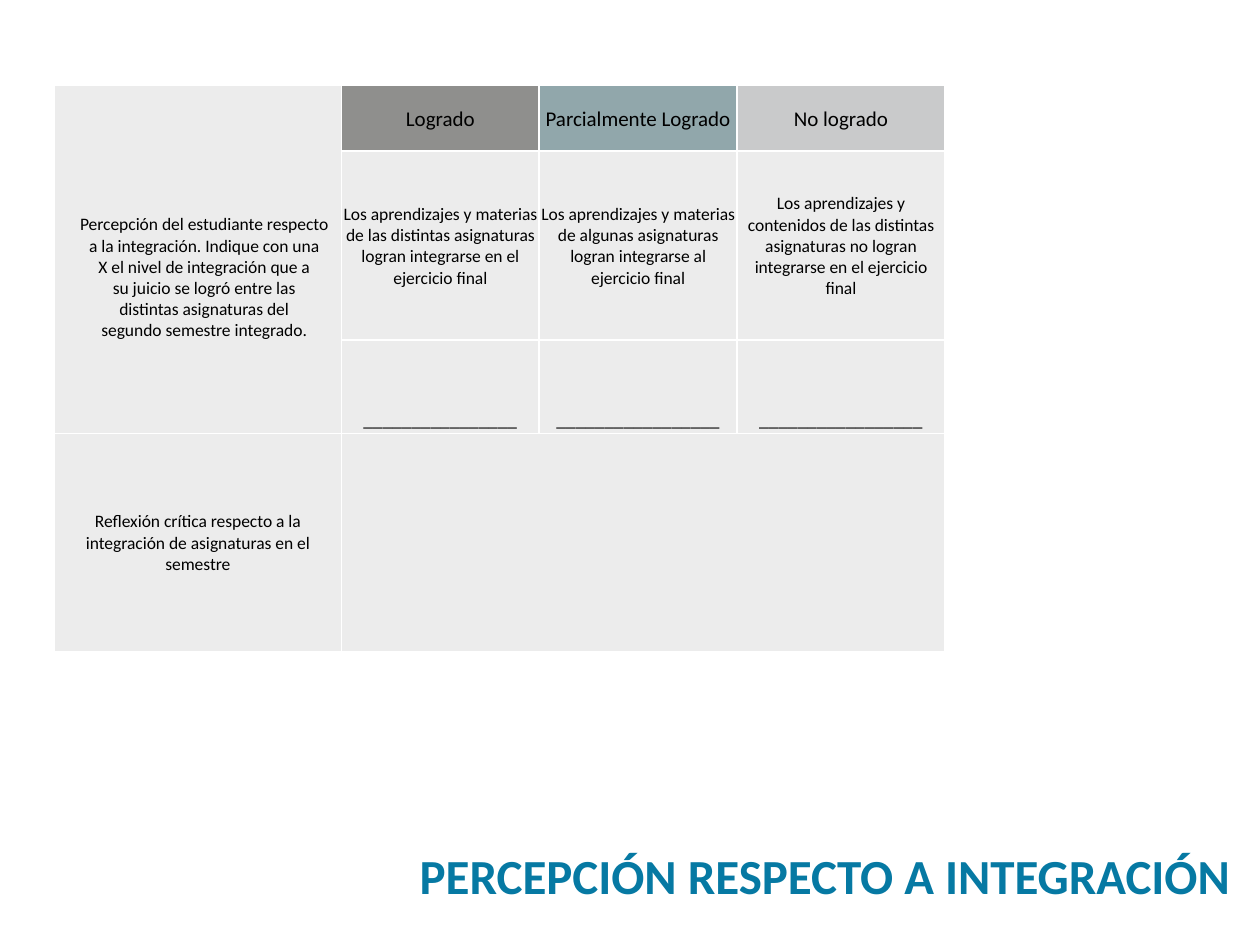
import pptx
import pptx.dml.color
import pptx.enum.text
import pptx.oxml
import pptx.oxml.ns
import pptx.util

SLIDE_WIDTH, SLIDE_HEIGHT = 10, 7.5
FONT = "Calibri"
PALE, INK, WHITE, BLUE = "ECECEC", "000000", "FFFFFF", "0679A3"
HEADER_FILLS = ["8F8F8D", "91A7AB", "C9CACB"]
LEFT, WIDTH = 0.43, 7.07
LABEL_WIDTH = 2.28
LEVEL_WIDTHS = [1.57, 1.57, 1.65]

PROMPT = [
    "Percepción del estudiante respecto",
    "a la integración. Indique con una",
    "X el nivel de integración que a",
    "su juicio se logró entre las",
    "distintas asignaturas del",
    "segundo semestre integrado.",
]
LEVELS = [
    ("Logrado",
     "Los aprendizajes y materias de las distintas asignaturas logran integrarse en el ejercicio final",
     "_" * 16),
    ("Parcialmente Logrado",
     "Los aprendizajes y materias de algunas asignaturas logran integrarse al ejercicio final",
     "_" * 17),
    ("No logrado",
     "Los aprendizajes y contenidos de las distintas asignaturas no logran integrarse en el ejercicio final",
     "_" * 17),
]
REFLECTION = "Reflexión crítica respecto a la integración de asignaturas en el semestre"


def inches(value):
    return pptx.util.Inches(value)


def colour(value):
    return pptx.dml.color.RGBColor.from_string(value)


def format_text(frame, size, align, hue=INK, bold=False):
    for para in frame.paragraphs:
        para.alignment = align
        para.font.size = pptx.util.Pt(size)
        for span in para.runs:
            span.font.name = FONT
            span.font.size = pptx.util.Pt(size)
            span.font.bold = bold
            span.font.color.rgb = colour(hue)


def set_borders(cell):
    """Draw a thin white line on every side of a cell."""
    properties = cell._tc.get_or_add_tcPr()
    for side in ("lnL", "lnR", "lnT", "lnB"):
        properties.append(pptx.oxml.parse_xml(
            f'<a:{side} {pptx.oxml.ns.nsdecls("a")} w="12700"><a:solidFill>'
            f'<a:srgbClr val="{WHITE}"/></a:solidFill></a:{side}>'))


def fill_cell(cell, text, size=10, top=0.01):
    cell.margin_left = cell.margin_right = inches(0.01)
    cell.margin_top, cell.margin_bottom = inches(top), 0
    cell.vertical_anchor = pptx.enum.text.MSO_ANCHOR.MIDDLE
    cell.text_frame.text = text
    format_text(cell.text_frame, size, pptx.enum.text.PP_ALIGN.CENTER)


def add_grid(page, box, columns, rows):
    """Place an empty table of pale cells in the box."""
    table = page.shapes.add_table(len(rows), len(columns), *map(inches, box)).table
    table.first_row = table.horz_banding = False
    for column, width in zip(table.columns, columns):
        column.width = inches(width)
    for row, height in zip(table.rows, rows):
        row.height = inches(height)
    for cell in table.iter_cells():
        set_borders(cell)
        cell.fill.solid()
        cell.fill.fore_color.rgb = colour(PALE)
    return table


def add_levels_table(page, box):
    rows = [0.52, 1.5, box[3] - 2.02]
    table = add_grid(page, box, [LABEL_WIDTH] + LEVEL_WIDTHS, rows)

    # Prompt beside all three rows
    prompt = table.cell(0, 0)
    prompt.merge(table.cell(2, 0))
    fill_cell(prompt, "\n".join(PROMPT))
    for para in prompt.text_frame.paragraphs:
        para._p.get_or_add_pPr().set("marL", str(inches(0.1)))

    # One column for each level: heading, description, answer line
    for column, (level, hue) in enumerate(zip(LEVELS, HEADER_FILLS), start=1):
        heading, description, answer = level
        table.cell(0, column).fill.fore_color.rgb = colour(hue)
        fill_cell(table.cell(0, column), heading, size=12)
        fill_cell(table.cell(1, column), description)
        fill_cell(table.cell(2, column), answer, size=11, top=0.24)


def add_reflection_table(page, box):
    table = add_grid(page, box, [LABEL_WIDTH, box[2] - LABEL_WIDTH], [box[3]])
    fill_cell(table.cell(0, 0), REFLECTION)


def add_title(page, box):
    title = page.shapes.title
    title.left, title.top, title.width, title.height = map(inches, box)
    frame = title.text_frame
    frame.text = "PERCEPCIÓN RESPECTO A INTEGRACIÓN"
    frame.word_wrap = True
    frame.auto_size = pptx.enum.text.MSO_AUTO_SIZE.NONE
    frame.vertical_anchor = pptx.enum.text.MSO_ANCHOR.MIDDLE
    frame.margin_left = frame.margin_right = inches(0.07)
    frame.margin_top = frame.margin_bottom = inches(0.04)
    format_text(frame, 28, pptx.enum.text.PP_ALIGN.RIGHT, BLUE, bold=True)


def main():
    deck = pptx.Presentation()
    deck.slide_width = inches(SLIDE_WIDTH)
    deck.slide_height = inches(SLIDE_HEIGHT)
    page = deck.slides.add_slide(deck.slide_layouts.get_by_name("Title Only"))
    add_title(page, (2.69, 6.67, 7.14, 0.54))
    add_levels_table(page, (LEFT, 0.68, WIDTH, 2.75))
    add_reflection_table(page, (LEFT, 3.44, WIDTH, 1.73))
    deck.save("out.pptx")


if __name__ == "__main__":
    main()
